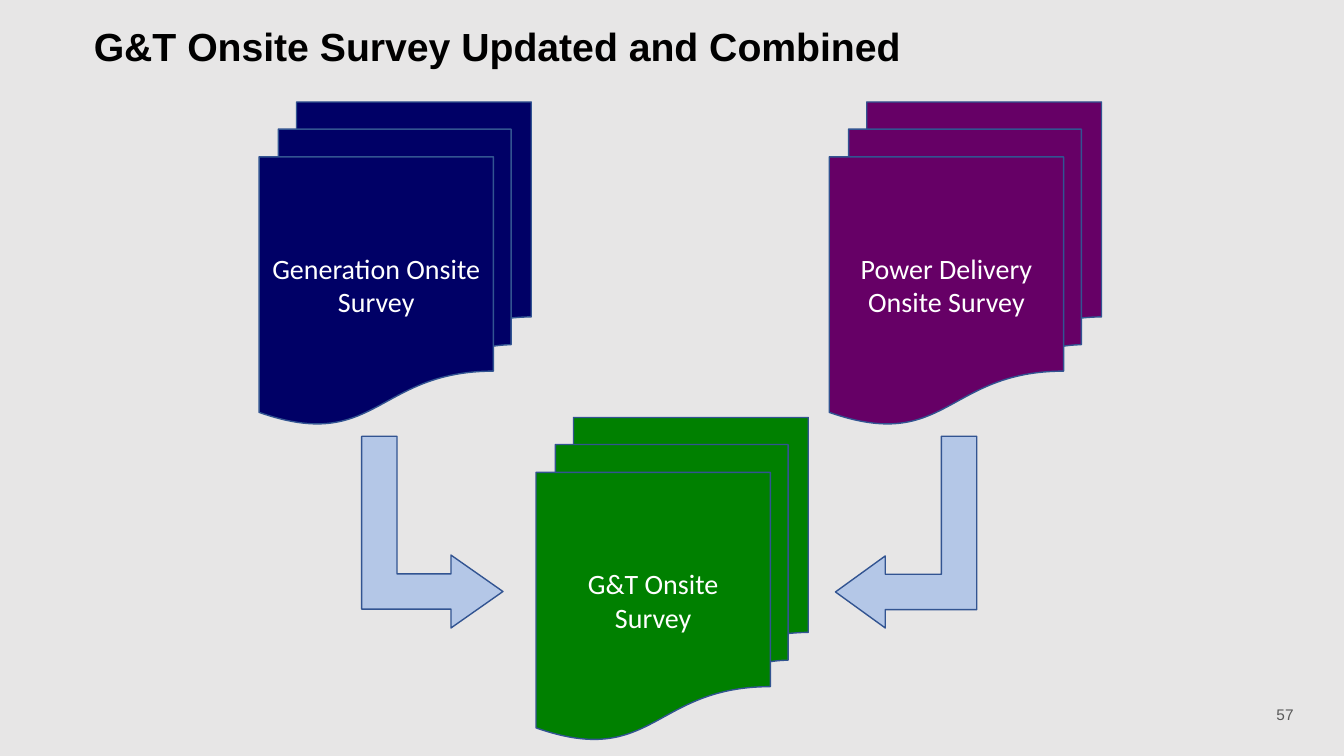
from dataclasses import dataclass

from pptx import Presentation
from pptx.dml.color import RGBColor
from pptx.enum.shapes import MSO_SHAPE
from pptx.enum.text import MSO_ANCHOR, MSO_AUTO_SIZE, PP_ALIGN
from pptx.shapes.autoshape import Shape
from pptx.slide import Slide
from pptx.text.text import _Paragraph as Paragraph
from pptx.util import Cm, Pt


@dataclass(frozen=True)
class Theme:
    background: str = "E7E6E6"
    outline: str = "325491"
    arrow: str = "B4C7E7"
    generation: str = "000066"
    delivery: str = "660066"
    combined: str = "008000"
    title: str = "000000"
    label: str = "FFFFFF"
    number: str = "595959"
    heading_font: str = "Arial"
    label_font: str = "Calibri"
    title_size: int = 28
    label_size: int = 20
    number_size: int = 11


@dataclass(frozen=True)
class Survey:
    label: str
    left: float
    top: float
    color: str


@dataclass(frozen=True)
class MergeArrow:
    left: float
    adjustments: tuple[float, float, float]
    points_left: bool


THEME = Theme()
SURVEY_SIZE = Cm(6.86), Cm(8.13)
ARROW_TOP = Cm(11.63)
ARROW_SIZE = Cm(4.83), Cm(3.56)

SURVEYS = [
    Survey("Generation Onsite Survey", 6.53, 2.57, THEME.generation),
    Survey("Power Delivery Onsite Survey", 20.9, 2.57, THEME.delivery),
    Survey("G&T Onsite\vSurvey", 13.51, 10.52, THEME.combined),
]
ARROWS = [
    MergeArrow(8.48, (0.25, 0.258, 0.368), False),
    MergeArrow(20.42, (0.25, 0.255, 0.353), True),
]


def style_text(paragraph: Paragraph, font: str, size: int, color: str,
               align: PP_ALIGN, bold: bool = False) -> None:
    paragraph.alignment = align
    paragraph.font.name = font
    paragraph.font.size = Pt(size)
    paragraph.font.bold = bold
    paragraph.font.color.rgb = RGBColor.from_string(color)


def style_shape(shape: Shape, fill: str) -> None:
    shape.shadow.inherit = False
    shape.fill.solid()
    shape.fill.fore_color.rgb = RGBColor.from_string(fill)
    shape.line.color.rgb = RGBColor.from_string(THEME.outline)
    shape.line.width = Pt(1)


def add_title(slide: Slide, text: str) -> None:
    title = slide.shapes.title
    title.left, title.top, title.width, title.height = Cm(2.11), Cm(0.56), Cm(29.79), Cm(1.35)
    frame = title.text_frame
    frame.text = text
    frame.auto_size = MSO_AUTO_SIZE.NONE
    frame.vertical_anchor = MSO_ANCHOR.TOP
    heading = frame.paragraphs[0]
    heading.line_spacing = 0.9
    style_text(heading, THEME.heading_font, THEME.title_size, THEME.title, PP_ALIGN.LEFT, bold=True)


def add_page_number(slide: Slide, number: str) -> None:
    frame = slide.shapes.add_textbox(Cm(31.37), Cm(17.27), Cm(2.03), Cm(1.45)).text_frame
    frame.word_wrap = True
    frame.vertical_anchor = MSO_ANCHOR.MIDDLE
    frame.text = number
    style_text(frame.paragraphs[0], THEME.heading_font, THEME.number_size, THEME.number,
               PP_ALIGN.CENTER)


def add_survey(slide: Slide, survey: Survey) -> None:
    stack = slide.shapes.add_shape(MSO_SHAPE.FLOWCHART_MULTIDOCUMENT,
                                   Cm(survey.left), Cm(survey.top), *SURVEY_SIZE)
    style_shape(stack, survey.color)
    frame = stack.text_frame
    frame.word_wrap = True
    frame.vertical_anchor = MSO_ANCHOR.MIDDLE
    frame.text = survey.label
    style_text(frame.paragraphs[0], THEME.label_font, THEME.label_size, THEME.label,
               PP_ALIGN.CENTER)


def add_merge_arrow(slide: Slide, merge: MergeArrow) -> None:
    arrow = slide.shapes.add_shape(MSO_SHAPE.BENT_UP_ARROW, Cm(merge.left), ARROW_TOP, *ARROW_SIZE)
    style_shape(arrow, THEME.arrow)
    for index, value in enumerate(merge.adjustments):
        arrow.adjustments[index] = value
    arrow.rotation = 90
    if merge.points_left:
        arrow._element.spPr.xfrm.set("flipV", "1")


def main() -> None:
    presentation = Presentation()
    presentation.slide_width, presentation.slide_height = Cm(33.87), Cm(19.05)
    slide = presentation.slides.add_slide(presentation.slide_layouts.get_by_name("Title Only"))
    slide.background.fill.solid()
    slide.background.fill.fore_color.rgb = RGBColor.from_string(THEME.background)

    # Title and page number
    add_title(slide, "G&T Onsite Survey Updated and Combined")
    add_page_number(slide, "57")

    # Two surveys merging into one
    for survey in SURVEYS:
        add_survey(slide, survey)
    for merge in ARROWS:
        add_merge_arrow(slide, merge)

    presentation.save("out.pptx")


if __name__ == "__main__":
    main()
